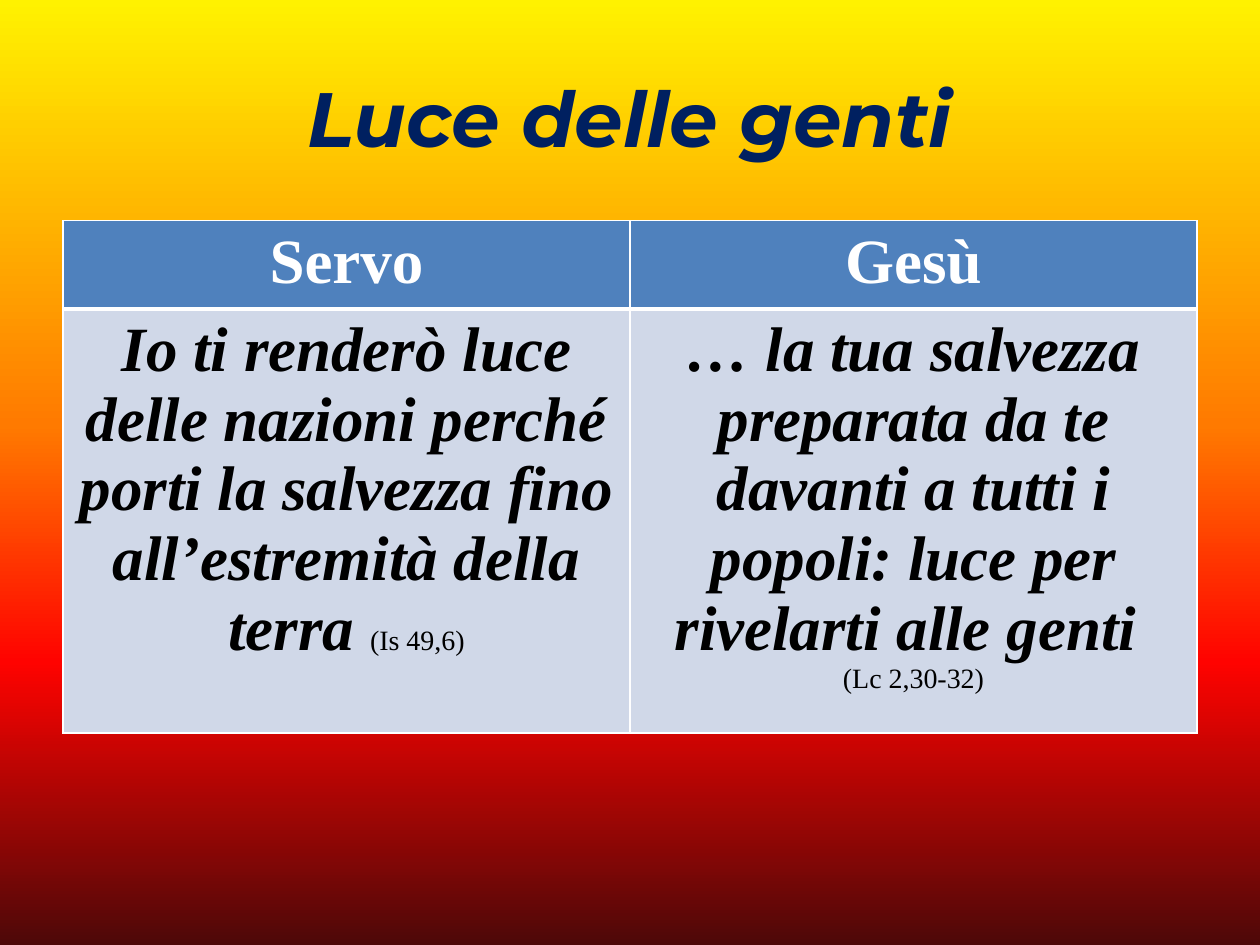
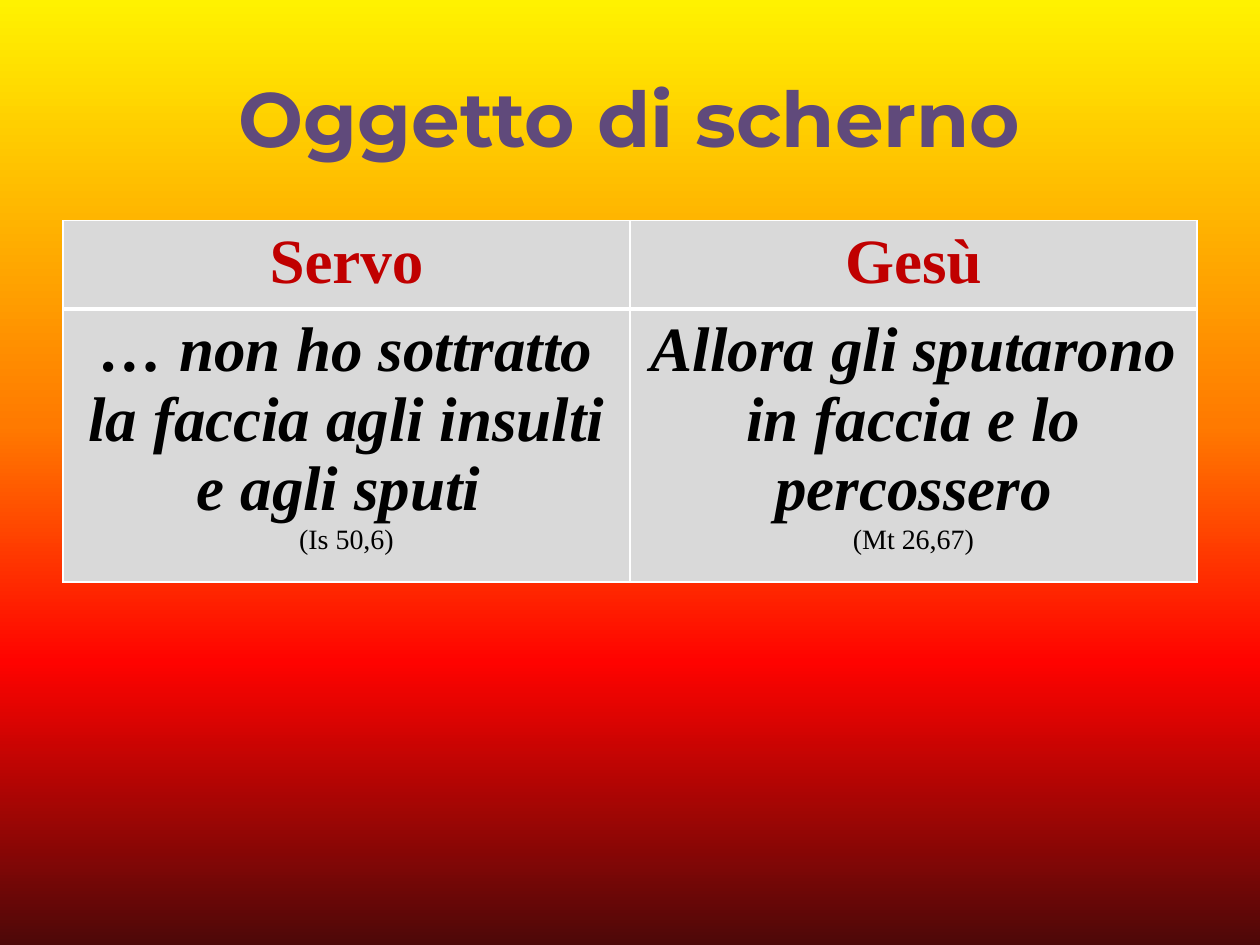
from dataclasses import dataclass

from lxml.etree import SubElement
from pptx import Presentation
from pptx.dml.color import RGBColor
from pptx.enum.text import MSO_ANCHOR, PP_ALIGN
from pptx.oxml.ns import qn
from pptx.util import Cm, Pt

COLUMN_HEADS = ("Servo", "Gesù")

SLIDES = [
    {
        "title": "Luce delle genti",
        "title_format": {"italic": True, "color": "002060"},
        "head_color": "FFFFFF",
        "head_fill": "4F81BD",
        "body_fill": "D0D8E8",
        "body_height": 7.9,
        "quotes": [
            [[("Io ti renderò luce delle nazioni perché porti la salvezza fino "
               "all’estremità della terra ", "quote"), ("(Is 49,6)", "source")]],
            [[("… la tua salvezza preparata da te davanti a tutti i popoli: "
               "luce per rivelarti alle genti ", "quote")],
             [("(Lc 2,30-32)", "source")]],
        ],
    },
    {
        "title": "Oggetto di scherno",
        "title_format": {"italic": False, "color": "604A7B"},
        "head_color": "C00000",
        "head_fill": "D9D9D9",
        "body_fill": "D9D9D9",
        "body_height": 5.08,
        "quotes": [
            [[("… non ho sottratto la faccia agli insulti e agli sputi ", "quote")],
             [("(Is 50,6)", "source")]],
            [[("Allora gli sputarono in faccia e lo percossero", "quote")],
             [("(Mt 26,67)", "source")]],
        ],
    },
]


@dataclass(frozen=True)
class Theme:
    title_font: str = "Montserrat"
    table_font: str = "Times New Roman"
    title_size: int = 44
    table_size: int = 36
    source_size: int = 16
    text_color: str = "000000"
    border_color: str = "FFFFFF"
    gradient: tuple = ((0, "FFF200"), (45, "FF7A00"), (70, "FF0300"), (100, "4D0808"))


THEME = Theme()
SLIDE_WIDTH, SLIDE_HEIGHT = 25.4, 19.05
MARGIN = 1.27
CONTENT_WIDTH = SLIDE_WIDTH - 2 * MARGIN
TITLE_TOP, TITLE_HEIGHT = 0.76, 3.18
TABLE_TOP, HEAD_HEIGHT = 4.45, 1.66

TITLE = {"name": THEME.title_font, "size": Pt(THEME.title_size), "bold": True}
HEAD = {"name": THEME.table_font, "size": Pt(THEME.table_size), "bold": True}
BODY = {
    "quote": {**HEAD, "italic": True, "color": THEME.text_color},
    "source": {**HEAD, "size": Pt(THEME.source_size), "bold": False,
               "italic": False, "color": THEME.text_color},
}


def write_text(text_frame, paragraphs, formats):
    for index, runs in enumerate(paragraphs):
        paragraph = text_frame.paragraphs[0] if index == 0 else text_frame.add_paragraph()
        paragraph.alignment = PP_ALIGN.CENTER
        for text, style in runs:
            run = paragraph.add_run()
            run.text = text
            for attribute, value in formats[style].items():
                if attribute == "color":
                    run.font.color.rgb = RGBColor.from_string(value)
                else:
                    setattr(run.font, attribute, value)


def paint_background(slide):
    fill = slide.background.fill
    fill.gradient()
    fill.gradient_angle = 270
    stops = next(slide.element.iter(qn("a:gsLst")))
    for stop in list(stops):
        stops.remove(stop)
    for position, color in THEME.gradient:
        stop = SubElement(stops, qn("a:gs"), pos=str(position * 1000))
        SubElement(stop, qn("a:srgbClr"), val=color)


def add_title(slide, content):
    box = slide.shapes.add_textbox(Cm(MARGIN), Cm(TITLE_TOP), Cm(CONTENT_WIDTH), Cm(TITLE_HEIGHT))
    box.text_frame.word_wrap = True
    box.text_frame.vertical_anchor = MSO_ANCHOR.MIDDLE
    write_text(box.text_frame, [[(content["title"], "title")]],
               {"title": {**TITLE, **content["title_format"]}})


def style_cell(cell, fill_color, top_width, bottom_width):
    properties = cell._tc.get_or_add_tcPr()
    for side, width in (("L", 1), ("R", 1), ("T", top_width), ("B", bottom_width)):
        line = SubElement(properties, qn(f"a:ln{side}"), w=str(Pt(width)))
        SubElement(SubElement(line, qn("a:solidFill")), qn("a:srgbClr"), val=THEME.border_color)
    cell.fill.solid()
    cell.fill.fore_color.rgb = RGBColor.from_string(fill_color)


def add_comparison(slide, content):
    heights = (HEAD_HEIGHT, content["body_height"])
    table = slide.shapes.add_table(
        len(heights), len(COLUMN_HEADS),
        Cm(MARGIN), Cm(TABLE_TOP), Cm(CONTENT_WIDTH), Cm(sum(heights))).table
    for row, height in zip(table.rows, heights):
        row.height = Cm(height)
    head_formats = {"head": {**HEAD, "color": content["head_color"]}}
    for column, (head, quote) in enumerate(zip(COLUMN_HEADS, content["quotes"])):
        head_cell, quote_cell = table.cell(0, column), table.cell(1, column)
        style_cell(head_cell, content["head_fill"], 1, 3)
        style_cell(quote_cell, content["body_fill"], 3, 1)
        write_text(head_cell.text_frame, [[(head, "head")]], head_formats)
        write_text(quote_cell.text_frame, quote, BODY)


def main():
    presentation = Presentation()
    presentation.slide_width = Cm(SLIDE_WIDTH)
    presentation.slide_height = Cm(SLIDE_HEIGHT)
    for content in SLIDES:
        slide = presentation.slides.add_slide(presentation.slide_layouts[6])
        paint_background(slide)
        add_title(slide, content)
        add_comparison(slide, content)
    presentation.save("out.pptx")


if __name__ == "__main__":
    main()
